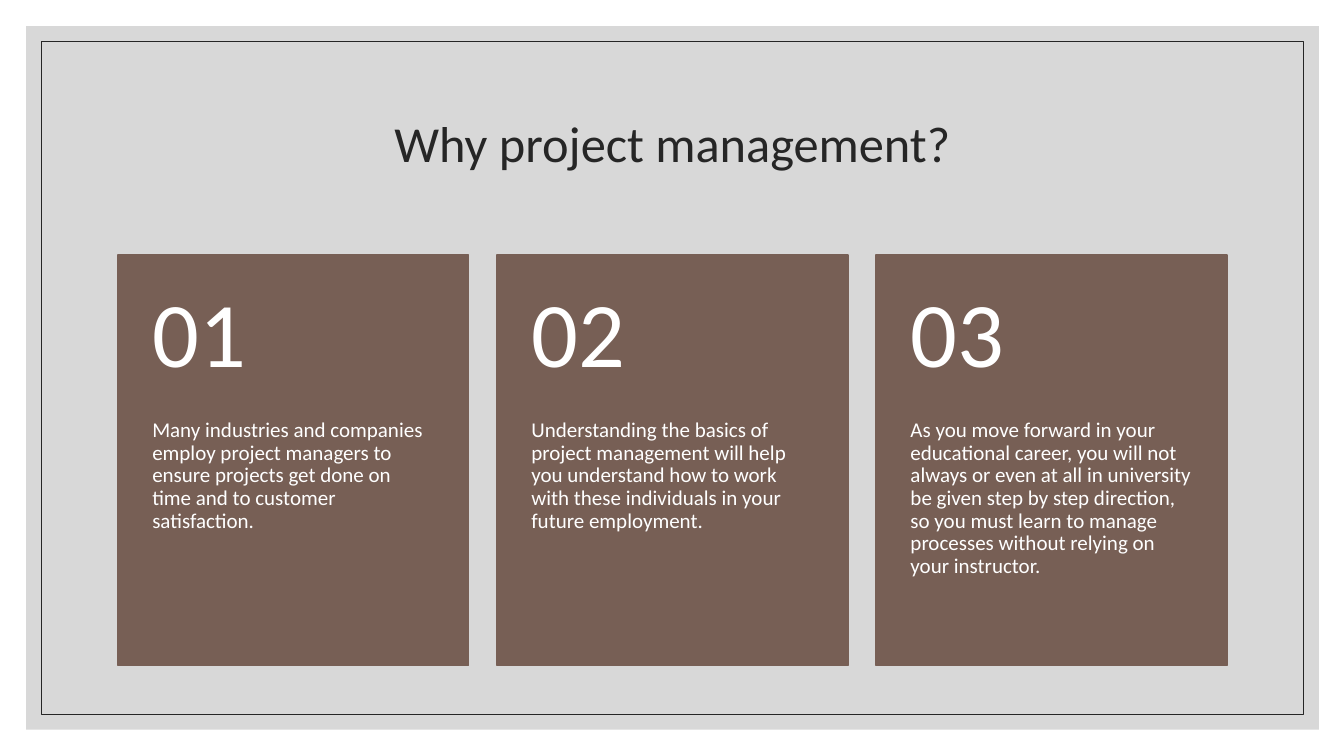
from lxml.etree import SubElement
from pptx import Presentation
from pptx.dml.color import RGBColor
from pptx.enum.shapes import MSO_SHAPE
from pptx.enum.text import MSO_ANCHOR, PP_ALIGN
from pptx.oxml.ns import qn
from pptx.util import Emu, Pt

INK = RGBColor(0x26, 0x26, 0x26)
GREY = RGBColor(0xBF, 0xBF, 0xBF)
BROWN = RGBColor(0x77, 0x5F, 0x55)
WHITE = RGBColor(0xFF, 0xFF, 0xFF)

# Card grid, in px (100 to the inch)
LEFT, TOP, WIDE, STEP = 117, 253, 348, 376
HEAD, BODY = 163, 244

CARDS = [
    "Many industries and companies employ project managers to ensure "
    "projects get done on time and to customer satisfaction.",
    "Understanding the basics of project management will help you "
    "understand how to work with these individuals in your future employment.",
    "As you move forward in your educational career, you will not always or "
    "even at all in university be given step by step direction, so you must "
    "learn to manage processes without relying on your instructor.",
]


def px(*nums):
    return [Emu(num * 9144) for num in nums]


def write(frame, text, size, color, font="Calibri", align=PP_ALIGN.LEFT,
          anchor=MSO_ANCHOR.TOP, pads=(10, 5, 10, 5)):
    frame.word_wrap = True
    frame.vertical_anchor = anchor
    (frame.margin_left, frame.margin_top,
     frame.margin_right, frame.margin_bottom) = px(*pads)
    para = frame.paragraphs[0]
    para.alignment = align
    para.line_spacing = 0.9
    run = para.add_run()
    run.text = text
    run.font.name = font
    run.font.size = Pt(size)
    run.font.color.rgb = color


class Deck:
    def __init__(self, wide, high):
        self.show = Presentation()
        self.show.slide_width, self.show.slide_height = px(wide, high)
        self.slide = self.show.slides.add_slide(self.show.slide_layouts[5])

    def rect(self, home, box, fill=None, line=None, width=1, alpha=None):
        shape = home.add_shape(MSO_SHAPE.RECTANGLE, *px(*box))
        shape.shadow.inherit = False
        if fill is None:
            shape.fill.background()
        else:
            shape.fill.solid()
            shape.fill.fore_color.rgb = fill
        if alpha is not None:
            tint = shape.element.spPr.find(".//" + qn("a:srgbClr"))
            SubElement(tint, qn("a:alpha"), val=str(alpha * 1000))
        if line is None:
            shape.line.fill.background()
        else:
            shape.line.color.rgb = line
            shape.line.width = Pt(width)

    def text(self, home, box, text, **style):
        write(home.add_textbox(*px(*box)).text_frame, text, **style)

    def title(self, box, text, **style):
        title = self.slide.shapes.title
        title.left, title.top, title.width, title.height = px(*box)
        write(title.text_frame, text, **style)
        # Bring the title in front of the backdrop
        title.element.getparent().append(title.element)

    def card(self, home, left, num, text):
        self.rect(home, (left, TOP, WIDE, HEAD + BODY), BROWN, BROWN)
        self.text(home, (left, TOP + HEAD, WIDE, BODY), text, size=15,
                  color=WHITE, pads=(34, 0, 34, 36))
        self.text(home, (left, TOP, WIDE, HEAD), f"{num:02}", size=66,
                  color=WHITE, anchor=MSO_ANCHOR.MIDDLE, pads=(34, 18, 34, 18))


def main():
    deck = Deck(1333, 750)
    shapes = deck.slide.shapes

    # Backdrop and thin frame
    deck.rect(shapes, (26, 26, 1282, 698), GREY, alpha=60)
    deck.rect(shapes, (41, 41, 1252, 668), line=INK, width=0.5)

    # Title
    deck.title((117, 70, 1100, 150), "Why project management?", size=36,
               color=INK, align=PP_ALIGN.CENTER, anchor=MSO_ANCHOR.MIDDLE)

    # Numbered cards
    group = shapes.add_group_shape().shapes
    for i, text in enumerate(CARDS):
        deck.card(group, LEFT + i * STEP, i + 1, text)

    deck.show.save("out.pptx")


if __name__ == "__main__":
    main()
